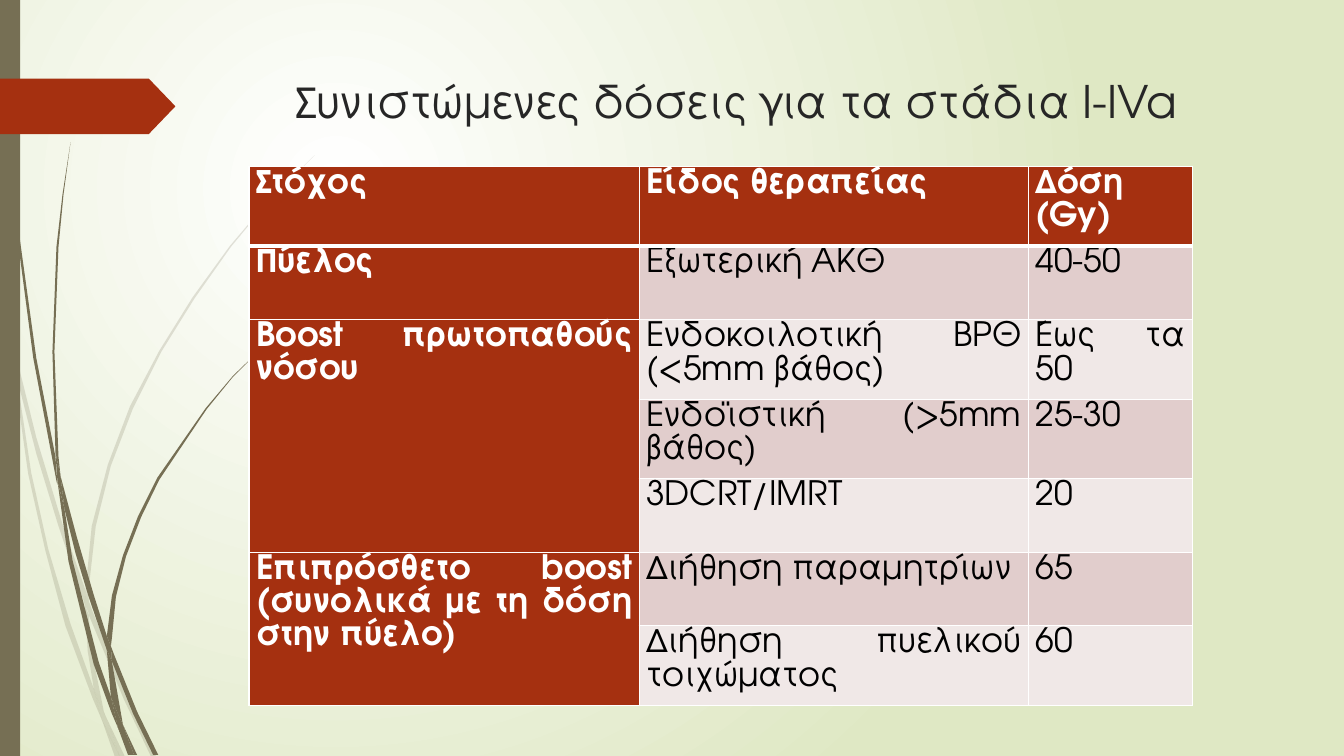
from lxml import etree
from pptx import Presentation
from pptx.dml.color import RGBColor
from pptx.enum.shapes import MSO_SHAPE
from pptx.enum.text import MSO_ANCHOR, MSO_AUTO_SIZE, PP_ALIGN
from pptx.oxml.ns import qn
from pptx.util import Inches, Pt

RECTANGLE, PENTAGON = MSO_SHAPE.RECTANGLE, MSO_SHAPE.PENTAGON
TOP, NO_AUTOFIT = MSO_ANCHOR.TOP, MSO_AUTO_SIZE.NONE
LEFT, JUSTIFY = PP_ALIGN.LEFT, PP_ALIGN.JUSTIFY

FONT = "TeX Gyre Adventor"
RUST, OLIVE, WHITE, BLACK, INK = "A53010", "766F54", "FFFFFF", "000000", "262626"
BAND_FILLS = ("F0E8E7", "E1CDCC")
TITLE_ONLY = 5

FAINT_GRASS = [
    [(0.11, 3.5), (0.09, 3.22), (0, 2.82), (0, 2.99), (0.1, 3.44)],
    [(0.58, 5.22), (0.84, 5.99), (0.85, 5.86), (0.62, 5.2), (0.36, 4.34), (0.14, 3.45),
     (0.17, 3.76), (0.36, 4.5)],
    [(0.92, 6.07), (0.88, 5.96), (0.88, 6.1), (1.23, 6.94), (1.5, 7.51), (1.55, 7.51),
     (1.27, 6.92)],
    [(1.19, 7.51), (1.24, 7.51), (1.05, 7.11)],
    [(0.93, 6.83), (0.7, 6.19), (0.48, 5.45), (0.31, 4.69), (0.17, 3.76), (0.11, 3.5),
     (0.28, 4.7), (0.45, 5.46), (0.65, 6.21), (0.92, 6.93), (1.01, 7.14), (0.99, 7.07)],
    [(0.84, 5.99), (0.87, 6.46), (0.93, 6.83), (0.96, 6.92), (1.05, 7.11), (1.03, 7.06),
     (0.91, 6.46), (0.88, 6.1)],
    [(0.88, 5.84), (0.95, 5.22), (1.1, 4.62), (1.32, 4.05), (1.6, 3.49), (1.93, 2.96),
     (2.29, 2.45), (2.68, 1.98), (3.12, 1.54), (2.68, 1.97), (2.28, 2.44), (1.91, 2.95),
     (1.58, 3.48), (1.29, 4.03), (1.07, 4.61), (0.91, 5.22), (0.85, 5.84), (0.88, 5.96)],
    [(1.01, 7.14), (1.14, 7.51), (1.19, 7.51)],
    [(0.88, 6.08), (0.88, 5.96), (0.85, 5.86), (0.84, 5.99)],
    [(0.96, 6.92), (0.93, 6.83), (0.99, 7.07), (1.01, 7.14), (1.19, 7.51), (1.05, 7.11)],
]
DARK_GRASS = [
    [(0.07, 1.1), (0.17, 2.33), (0.33, 3.55), (0.56, 4.77), (0.57, 4.81), (0.55, 4.53),
     (0.36, 3.55), (0.19, 2.32), (0.08, 1.09), (0.05, 0.48), (0.04, 0), (0.03, 0),
     (0.04, 0.48)],
    [(0.88, 5.92), (1.06, 6.45), (1.06, 6.31), (0.93, 5.9), (0.76, 5.32), (0.6, 4.72),
     (0.64, 5.05), (0.75, 5.49)],
    [(1.13, 6.49), (1.1, 6.41), (1.11, 6.56), (1.32, 7.08), (1.52, 7.49), (1.57, 7.49),
     (1.36, 7.06)],
    [(1.1, 6.91), (0.98, 6.57), (0.72, 5.56), (0.64, 5.05), (0.57, 4.77), (0.68, 5.57),
     (0.93, 6.59), (1.11, 7.08), (1.17, 7.22), (1.16, 7.17)],
    [(0.6, 4.72), (0.58, 4.53), (0.54, 3.49), (0.58, 2.45), (0.63, 1.93), (0.7, 1.41),
     (0.62, 1.93), (0.56, 2.45), (0.52, 3.49), (0.55, 4.49)],
    [(1.33, 7.49), (1.36, 7.49), (1.22, 7.19)],
    [(0.57, 4.77), (0.64, 5.05), (0.6, 4.72), (0.55, 4.49)],
    [(1.11, 6.33), (1.15, 5.92), (1.25, 5.52), (1.4, 5.13), (1.58, 4.76), (2.05, 4.06),
     (2.31, 3.74), (2.61, 3.44), (2.31, 3.73), (2.04, 4.05), (1.56, 4.74), (1.37, 5.12),
     (1.22, 5.51), (1.11, 5.91), (1.06, 6.31), (1.1, 6.41)],
    [(1.17, 7.22), (1.27, 7.49), (1.31, 7.49)],
    [(1.06, 6.45), (1.1, 6.91), (1.16, 7.06), (1.22, 7.19), (1.11, 6.56)],
    [(1.06, 6.45), (1.11, 6.56), (1.1, 6.41), (1.06, 6.31)],
    [(1.16, 7.06), (1.1, 6.91), (1.17, 7.22), (1.3, 7.49), (1.33, 7.49), (1.22, 7.19)],
]

DOSES = [
    ("Στόχος", "Είδος θεραπείας", "Δόση (Gy)"),
    ("Πύελος", "Εξωτερική ΑΚΘ", "40-50"),
    ("Boost πρωτοπαθούς νόσου", "Ενδοκοιλοτική ΒΡΘ (<5mm βάθος)", "Έως τα 50"),
    ("", "Ενδοϊστική (>5mm βάθος)", "25-30"),
    ("", "3DCRT/IMRT", "20"),
    ("Επιπρόσθετο boost (συνολικά με τη δόση στην πύελο)", "Διήθηση παραμητρίων", "65"),
    ("", "Διήθηση πυελικού τοιχώματος", "60"),
]
TARGET_SPANS = [(2, 4), (5, 6)]
COLUMN_WIDTHS = (3.87, 3.86, 1.63)
ROW_HEIGHTS = (0.79, 0.73, 0.79, 0.79, 0.73, 0.73, 0.79)


def rgb(hex_code):
    return RGBColor.from_string(hex_code)


def paint(shape, hex_code, opacity=100):
    shape.shadow.inherit = False
    shape.fill.solid()
    shape.fill.fore_color.rgb = rgb(hex_code)
    shape.line.fill.background()
    if opacity < 100:
        color = shape.fill._xPr.find(".//" + qn("a:srgbClr"))
        etree.SubElement(color, qn("a:alpha"), val=str(opacity * 1000))


def set_background(slide):
    """White glow in the upper left, fading to pale green."""
    fill = slide.background.fill
    fill.gradient()
    for stop, position, hex_code in zip(fill.gradient_stops, (0, 1), (WHITE, "DFE8C4")):
        stop.position = position
        stop.color.rgb = rgb(hex_code)
    gradient = slide._element.find(".//" + qn("a:gradFill"))
    gradient.remove(gradient.find(qn("a:lin")))
    glow = etree.SubElement(gradient, qn("a:path"), path="circle")
    etree.SubElement(glow, qn("a:fillToRect"), l="50000", t="50000", r="100000", b="100000")


def add_grass(slide, blades, opacity):
    tuft = slide.shapes.add_group_shape()
    for blade in blades:
        outline = [(Inches(x), Inches(y)) for x, y in blade]
        builder = tuft.shapes.build_freeform(*outline[0])
        builder.add_line_segments(outline[1:], close=True)
        paint(builder.convert_to_shape(), OLIVE, opacity)


def add_side_decoration(slide, height):
    add_grass(slide, FAINT_GRASS, 20)
    add_grass(slide, DARK_GRASS, 100)
    stem = slide.shapes.add_shape(RECTANGLE, 0, 0, Inches(0.2), height)
    paint(stem, OLIVE)
    marker = slide.shapes.add_shape(PENTAGON, 0, Inches(0.78), Inches(1.74), Inches(0.55))
    marker.adjustments[0] = 0.48
    paint(marker, RUST)


def style_paragraph(paragraph, size, hex_code, bold, alignment):
    paragraph.alignment = alignment
    for run in paragraph.runs:
        run.font.name = FONT
        run.font.size = Pt(size)
        run.font.bold = bold
        run.font.color.rgb = rgb(hex_code)


def add_title(slide, left, top, width, height):
    title = slide.shapes.title
    title.left, title.top, title.width, title.height = map(Inches, (left, top, width, height))
    frame = title.text_frame
    frame.text = "Συνιστώμενες δόσεις για τα στάδια Ι-IVa"
    frame.word_wrap = True
    frame.auto_size = NO_AUTOFIT
    frame.vertical_anchor = TOP
    style_paragraph(frame.paragraphs[0], 32, INK, False, LEFT)


def set_borders(cell, bottom):
    """Give the cell white borders of one point; bottom is in points."""
    properties = cell._tc.get_or_add_tcPr()
    for i, (side, width) in enumerate((("L", 1), ("R", 1), ("T", 1), ("B", bottom))):
        border = etree.Element(qn(f"a:ln{side}"), w=str(Pt(width)))
        solid = etree.SubElement(border, qn("a:solidFill"))
        etree.SubElement(solid, qn("a:srgbClr"), val=WHITE)
        properties.insert(i, border)


def format_dose_cell(cell, text, row, column):
    emphasized = row == 0 or column == 0
    cell.margin_left = cell.margin_right = Inches(0.07)
    cell.margin_top = cell.margin_bottom = 0
    cell.vertical_anchor = TOP
    cell.fill.solid()
    cell.fill.fore_color.rgb = rgb(RUST if emphasized else BAND_FILLS[row % 2])
    set_borders(cell, bottom=3 if row == 0 else 1)
    paragraph = cell.text_frame.paragraphs[0]
    paragraph.text = text
    paragraph.line_spacing = 1.07
    style_paragraph(paragraph, 24, WHITE if emphasized else BLACK, emphasized, JUSTIFY)


def add_dose_table(slide, left, top):
    table = slide.shapes.add_table(
        len(DOSES), len(COLUMN_WIDTHS), Inches(left), Inches(top),
        Inches(sum(COLUMN_WIDTHS)), Inches(sum(ROW_HEIGHTS))).table
    for column, width in zip(table.columns, COLUMN_WIDTHS):
        column.width = Inches(width)
    for row, height in zip(table.rows, ROW_HEIGHTS):
        row.height = Inches(height)
    for r, values in enumerate(DOSES):
        for c, text in enumerate(values):
            format_dose_cell(table.cell(r, c), text, r, c)
    for first, last in TARGET_SPANS:
        table.cell(first, 0).merge(table.cell(last, 0))


def main():
    deck = Presentation()
    deck.slide_width, deck.slide_height = Inches(13.33), Inches(7.5)
    slide = deck.slides.add_slide(deck.slide_layouts[TITLE_ONLY])
    set_background(slide)
    add_side_decoration(slide, deck.slide_height)
    add_title(slide, 2.84, 0.68, 9.75, 1.4)
    add_dose_table(slide, 2.47, 1.65)
    deck.save("out.pptx")


if __name__ == "__main__":
    main()
